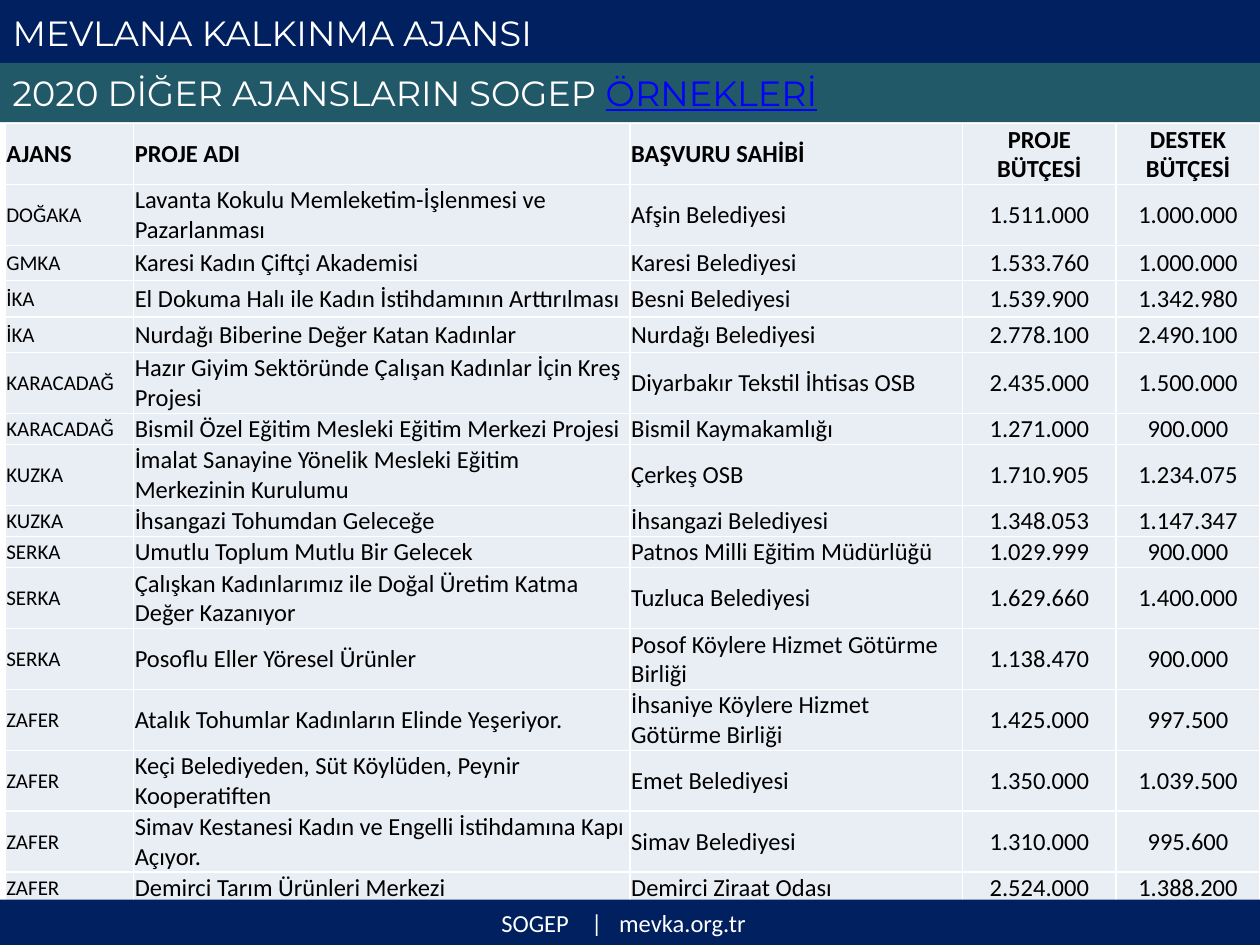
from pptx import Presentation
from pptx import util as u
from pptx.dml.color import RGBColor
from pptx.enum import shapes, text

COLORS = {"navy": "002060", "teal": "215968", "cell": "E9EDF4",
          "white": "FFFFFF", "black": "000000", "link": "0000FF"}

TITLE = "MEVLANA KALKINMA AJANSI"
SUBTITLE = ("2020 DİĞER AJANSLARIN SOGEP ", "ÖRNEKLERİ")
FOOTER = (("SOGEP", 0), (" ", 950), ("|", 0), (" ", 630), ("mevka.org.tr", 0))

HEADER = ("AJANS", "PROJE ADI", "BAŞVURU SAHİBİ", "PROJE BÜTÇESİ", "DESTEK BÜTÇESİ")
PROJECTS = [
    ("DOĞAKA", "Lavanta Kokulu Memleketim-İşlenmesi ve Pazarlanması",
     "Afşin Belediyesi", "1.511.000", "1.000.000"),
    ("GMKA", "Karesi Kadın Çiftçi Akademisi",
     "Karesi Belediyesi", "1.533.760", "1.000.000"),
    ("İKA", "El Dokuma Halı ile Kadın İstihdamının Arttırılması",
     "Besni Belediyesi", "1.539.900", "1.342.980"),
    ("İKA", "Nurdağı Biberine Değer Katan Kadınlar",
     "Nurdağı Belediyesi", "2.778.100", "2.490.100"),
    ("KARACADAĞ", "Hazır Giyim Sektöründe Çalışan Kadınlar İçin Kreş Projesi",
     "Diyarbakır Tekstil İhtisas OSB", "2.435.000", "1.500.000"),
    ("KARACADAĞ", "Bismil Özel Eğitim Mesleki Eğitim Merkezi Projesi",
     "Bismil Kaymakamlığı", "1.271.000", "900.000"),
    ("KUZKA", "İmalat Sanayine Yönelik Mesleki Eğitim Merkezinin Kurulumu",
     "Çerkeş OSB", "1.710.905", "1.234.075"),
    ("KUZKA", "İhsangazi Tohumdan Geleceğe",
     "İhsangazi Belediyesi", "1.348.053", "1.147.347"),
    ("SERKA", "Umutlu Toplum Mutlu Bir Gelecek",
     "Patnos Milli Eğitim Müdürlüğü", "1.029.999", "900.000"),
    ("SERKA", "Çalışkan Kadınlarımız ile Doğal Üretim Katma Değer Kazanıyor",
     "Tuzluca Belediyesi", "1.629.660", "1.400.000"),
    ("SERKA", "Posoflu Eller Yöresel Ürünler",
     "Posof Köylere Hizmet Götürme Birliği", "1.138.470", "900.000"),
    ("ZAFER", "Atalık Tohumlar Kadınların Elinde Yeşeriyor.",
     "İhsaniye Köylere Hizmet Götürme Birliği", "1.425.000", "997.500"),
    ("ZAFER", "Keçi Belediyeden, Süt Köylüden, Peynir Kooperatiften",
     "Emet Belediyesi", "1.350.000", "1.039.500"),
    ("ZAFER", "Simav Kestanesi Kadın ve Engelli İstihdamına Kapı Açıyor.",
     "Simav Belediyesi", "1.310.000", "995.600"),
    ("ZAFER", "Demirci Tarım Ürünleri Merkezi",
     "Demirci Ziraat Odası", "2.524.000", "1.388.200"),
]
COLUMN_WIDTHS = (1.02, 3.94, 2.64, 1.22, 1.14)
ONE_LINE, TWO_LINES = 0.24, 0.48
ROOMY_ROWS = {2: 0.28, 3: 0.29, 4: 0.28}
TWO_LINE_ROWS = {0, 1, 5, 7, 10, 11, 12, 13, 14}


def paint(target, color):
    target.fill.solid()
    target.fill.fore_color.rgb = RGBColor.from_string(COLORS[color])


def style(font, name, size, color, bold=False):
    font.name, font.size, font.bold = name, u.Pt(size), bold
    font.color.rgb = RGBColor.from_string(COLORS[color])


def format_bar(bar, top, height, color, font, size, align):
    bar.left, bar.top = u.Inches(0), u.Inches(top)
    bar.width, bar.height = u.Inches(10), u.Inches(height)
    paint(bar, color)
    frame = bar.text_frame
    frame.auto_size = text.MSO_AUTO_SIZE.NONE
    frame.word_wrap = True
    frame.vertical_anchor = text.MSO_ANCHOR.MIDDLE
    para = frame.paragraphs[0]
    para.alignment = align
    style(para.font, font, size, "white")
    return para


def add_bar(page, *look):
    bar = page.shapes.add_shape(shapes.MSO_SHAPE.RECTANGLE, 0, 0, 0, 0)
    bar.shadow.inherit = False
    bar.line.fill.background()
    return bar, format_bar(bar, *look)


def add_projects(page):
    rows = [HEADER] + PROJECTS
    heights = [ROOMY_ROWS.get(i, TWO_LINES if i in TWO_LINE_ROWS else ONE_LINE)
               for i in range(len(rows))]
    table = page.shapes.add_table(
        len(rows), len(HEADER), u.Inches(0.04), u.Inches(0.98),
        u.Inches(sum(COLUMN_WIDTHS)), u.Inches(sum(heights))).table
    table.first_row = table.horz_banding = False
    for column, width in zip(table.columns, COLUMN_WIDTHS):
        column.width = u.Inches(width)
    for i, (values, height) in enumerate(zip(rows, heights)):
        table.rows[i].height = u.Inches(height)
        for j, value in enumerate(values):
            cell = table.cell(i, j)
            cell.text = value
            cell.vertical_anchor = text.MSO_ANCHOR.MIDDLE
            cell.margin_left = cell.margin_right = cell.margin_top = u.Inches(0.01)
            cell.margin_bottom = 0
            paint(cell, "cell")
            para = cell.text_frame.paragraphs[0]
            para.alignment = text.PP_ALIGN.CENTER if j >= 3 else text.PP_ALIGN.LEFT
            size = 12 if i and j == 0 else 14
            style(para.font, "Calibri", size, "black", bold=i == 0)


def main():
    deck = Presentation()
    deck.slide_width, deck.slide_height = u.Inches(10), u.Inches(7.5)
    page = deck.slides.add_slide(deck.slide_layouts[5])
    left, center = text.PP_ALIGN.LEFT, text.PP_ALIGN.CENTER

    title = page.shapes.title
    title.text = TITLE
    format_bar(title, 0, 0.52, "navy", "Montserrat", 20, left)

    subtitle, para = add_bar(page, 0.5, 0.47, "teal", "Montserrat", 20, left)
    for part in SUBTITLE:
        span = para.add_run()
        span.text = part
    span.font.underline = True
    span.font.color.rgb = RGBColor.from_string(COLORS["link"])

    add_projects(page)

    footer, para = add_bar(page, 7.14, 0.36, "navy", "Calibri", 14, center)
    footer.text_frame.margin_right = u.Inches(0.2)
    for part, spacing in FOOTER:
        span = para.add_run()
        span.text = part
        if spacing:
            span.font._element.set("spc", str(spacing))

    deck.save("out.pptx")


if __name__ == "__main__":
    main()
